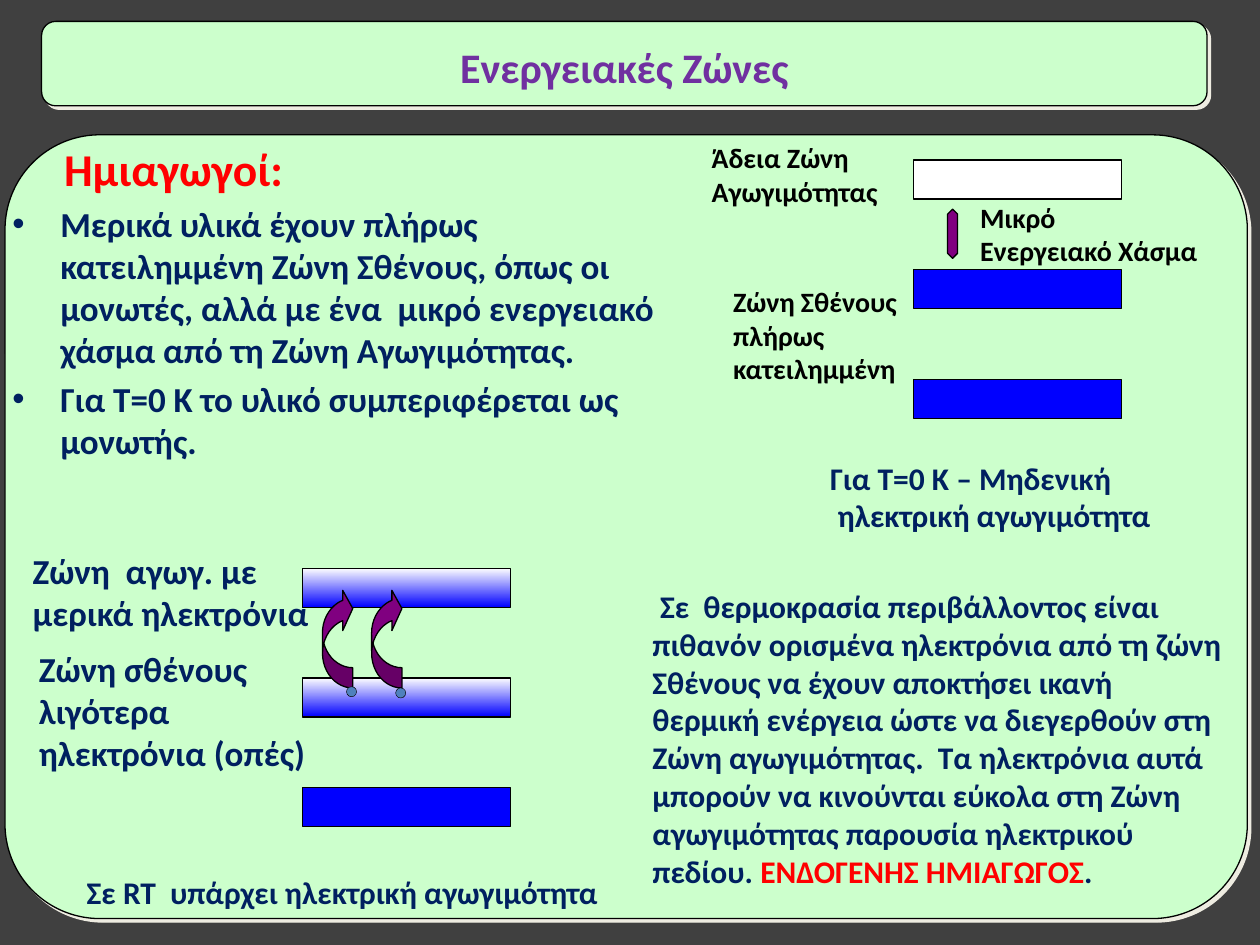
import pptx
import pptx.util
import pptx.dml.color
import pptx.enum.shapes
import pptx.enum.text
import pptx.oxml
from lxml import etree

Inches = pptx.util.Inches
Pt = pptx.util.Pt
SHAPES = pptx.enum.shapes.MSO_SHAPE
ALIGN = pptx.enum.text.PP_ALIGN
DRAWING = "http://schemas.openxmlformats.org/drawingml/2006/main"

NAVY, RED, BLACK, BLUE = "002060", "FF0000", "000000", "0000FF"
PURPLE, MINT, WHITE = "800080", "CCFFCC", "FFFFFF"
FADE = (WHITE, BLUE)

PANELS = [
    ((0.04, 1.07, 9.86, 6.22), 0.121),
    ((0.33, 0.17, 9.25, 0.67), 0.167),
]

BAND_SIZE = (1.65, 0.31)
BAND_STEP = 0.87
BAND_STACKS = [
    (7.25, 1.27, (WHITE, BLUE, BLUE)),
    (2.4, 4.51, (FADE, FADE, BLUE)),
]

GAP_ARROW = (7.52, 1.66, 0.08, 0.39)
JUMP_ARROWS = [(2.56, 4.67, 0.24, 0.79), (2.95, 4.67, 0.24, 0.79)]
ELECTRONS = [(2.75, 5.45, 0.08, 0.08), (3.14, 5.46, 0.08, 0.08)]

HEADING = "Ημιαγωγοί:"
BULLETS = [
    "Μερικά υλικά έχουν πλήρως κατειλημμένη Ζώνη Σθένους, όπως οι μονωτές, "
    "αλλά με ένα  μικρό ενεργειακό χάσμα από τη Ζώνη Αγωγιμότητας.",
    "Για Τ=0 Κ το υλικό συμπεριφέρεται ως μονωτής.",
]

LABELS = [
    ((0.59, 6.88, 4.3, 0.4), 18, NAVY, ["Σε RT  υπάρχει ηλεκτρική αγωγιμότητα"]),
    ((5.72, 2.21, 1.72, 0.91), 16, BLACK, ["Ζώνη Σθένους πλήρως κατειλημμένη"]),
    ((5.55, 1.07, 1.65, 0.64), 16, BLACK, ["Άδεια Ζώνη Αγωγιμότητας"]),
    ((7.68, 1.54, 1.97, 0.64), 16, BLACK, ["Μικρό", "Ενεργειακό Χάσμα"]),
    ((0.21, 5.09, 2.32, 1.11), 20, NAVY, ["Ζώνη σθένους λιγότερα ηλεκτρόνια (οπές)"]),
    ((0.16, 4.31, 2.48, 0.77), 20, NAVY, ["Ζώνη  αγωγ. με μερικά ηλεκτρόνια"]),
]

ZERO_KELVIN = ["Για Τ=0 Κ – Μηδενική", "ηλεκτρική αγωγιμότητα"]
ROOM_TEMPERATURE = [
    ("Σε  θερμοκρασία περιβάλλοντος είναι πιθανόν ορισμένα ηλεκτρόνια από τη ζώνη "
     "Σθένους να έχουν αποκτήσει ικανή θερμική ενέργεια ώστε να διεγερθούν στη Ζώνη "
     "αγωγιμότητας.  Τα ηλεκτρόνια αυτά μπορούν να κινούνται εύκολα στη Ζώνη "
     "αγωγιμότητας παρουσία ηλεκτρικού πεδίου. ", NAVY),
    ("ΕΝΔΟΓΕΝΗΣ ΗΜΙΑΓΩΓΟΣ", RED),
    (".", NAVY),
]


def color(value):
    return pptx.dml.color.RGBColor.from_string(value)


def add_figure(page, kind, place, fill, adjustments=(), line_width=0.75):
    shape = page.shapes.add_shape(kind, *map(Inches, place))
    shape.shadow.inherit = False
    for index, value in enumerate(adjustments):
        shape.adjustments[index] = value
    if isinstance(fill, tuple):
        shape.fill.gradient()
        shape.fill.gradient_angle = 270
        for position, (stop, value) in enumerate(zip(shape.fill.gradient_stops, fill)):
            stop.color.rgb = color(value)
            stop.position = position
    else:
        shape.fill.solid()
        shape.fill.fore_color.rgb = color(fill)
    shape.line.color.rgb = color(BLACK)
    shape.line.width = Pt(line_width)
    return shape


def add_panel(page, place, corner):
    panel = add_figure(page, SHAPES.ROUNDED_RECTANGLE, place, MINT, [corner])
    effects = panel._element.spPr.find(f"{{{DRAWING}}}effectLst")
    effects.append(pptx.oxml.parse_xml(
        f'<a:outerShdw xmlns:a="{DRAWING}" dist="35560" dir="2700000" algn="ctr" '
        'rotWithShape="0"><a:srgbClr val="EEECE1"/></a:outerShdw>'))


def add_box(page, place, wrap=True):
    box = page.shapes.add_textbox(*map(Inches, place))
    box.text_frame.word_wrap = wrap
    return box.text_frame


def add_para(frame, spans, size, margin=0, indent=0, bullet=False, before=0):
    first = frame.paragraphs[0]
    para = first if not first.runs else frame.add_paragraph()
    settings = para._p.get_or_add_pPr()
    settings.set("marL", str(Inches(margin)))
    settings.set("indent", str(Inches(indent)))
    if before:
        para.space_before = Pt(before)
    if bullet:
        font = etree.SubElement(settings, f"{{{DRAWING}}}buFont")
        font.set("typeface", "Arial")
        mark = etree.SubElement(settings, f"{{{DRAWING}}}buChar")
        mark.set("char", "•")
    for text, value in spans:
        span = para.add_run()
        span.text = text
        span.font.name = "Calibri"
        span.font.size = Pt(size)
        span.font.bold = True
        span.font.color.rgb = color(value)
    return para


def main():
    deck = pptx.Presentation()
    deck.slide_width, deck.slide_height = Inches(10), Inches(7.5)
    page = deck.slides.add_slide(deck.slide_layouts[6])
    page.background.fill.solid()
    page.background.fill.fore_color.rgb = color("404040")

    for place, corner in PANELS:
        add_panel(page, place, corner)

    title = add_box(page, (0.58, 0.28, 8.75, 0.51))
    add_para(title, [("Ενεργειακές Ζώνες", "7030A0")], 24).alignment = ALIGN.CENTER

    body = add_box(page, (0, 1.07, 5.55, 2.71))
    add_para(body, [(HEADING, RED)], 26, margin=0.41)
    for text in BULLETS:
        add_para(body, [(text, NAVY)], 20, 0.38, -0.38, bullet=True, before=4)

    for left, top, fills in BAND_STACKS:
        for row, fill in enumerate(fills):
            place = (left, top + row * BAND_STEP, *BAND_SIZE)
            add_figure(page, SHAPES.RECTANGLE, place, fill)

    add_figure(page, SHAPES.UP_DOWN_ARROW, GAP_ARROW, PURPLE, [0.5, 0.99])

    for place, size, value, lines in LABELS:
        frame = add_box(page, place)
        for text in lines:
            add_para(frame, [(text, value)], size)

    zero = add_box(page, (6.49, 3.59, 2.76, 0.71), wrap=False)
    for text, margin in zip(ZERO_KELVIN, (0, 0.06)):
        add_para(zero, [(text, NAVY)], 18, margin)

    room = add_box(page, (5.08, 4.61, 4.72, 2.53))
    add_para(room, ROOM_TEMPERATURE, 18, indent=0.06)

    for place in JUMP_ARROWS:
        arrow = add_figure(page, SHAPES.CURVED_RIGHT_ARROW, place, PURPLE,
                           [0.67, 1.33, 0.33])
        arrow._element.spPr.xfrm.set("flipV", "1")
    for place in ELECTRONS:
        add_figure(page, SHAPES.OVAL, place, "4F81BD", line_width=0.25)

    deck.save("out.pptx")


if __name__ == "__main__":
    main()
